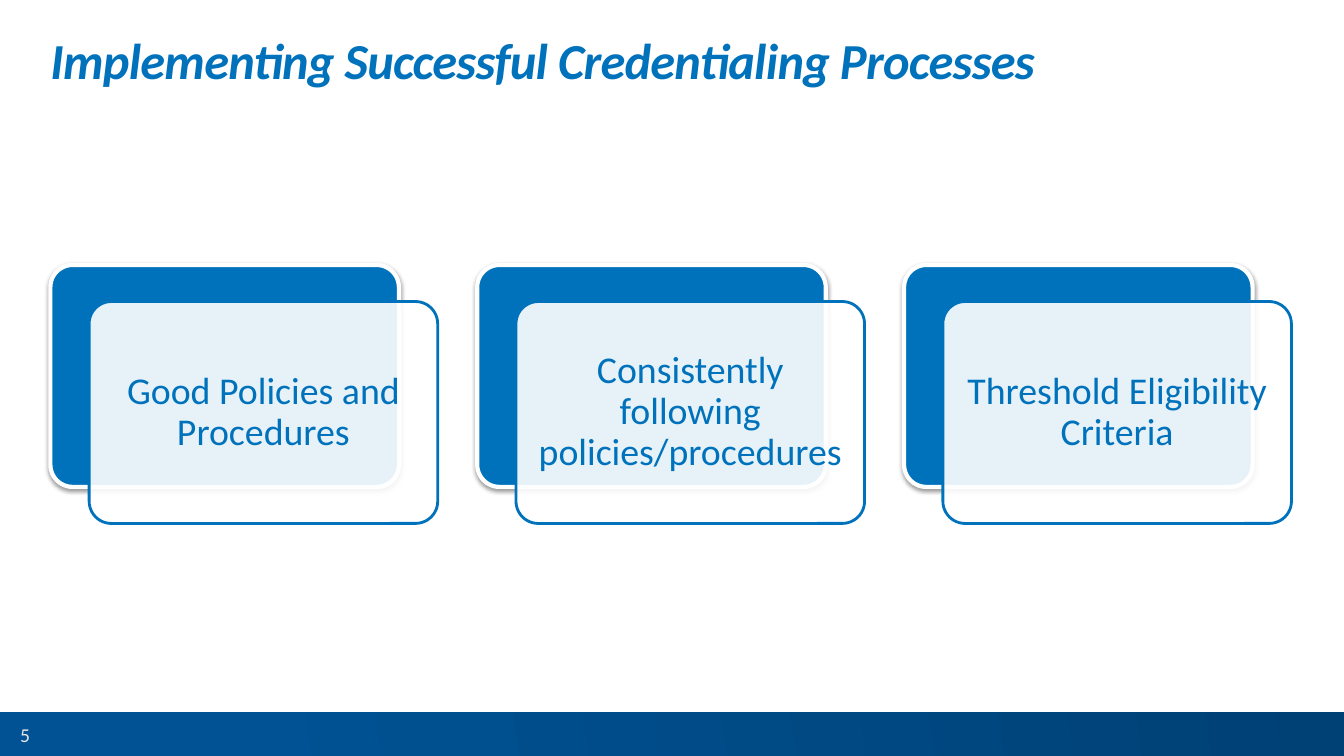
from lxml.etree import SubElement
from pptx import Presentation
from pptx.dml.color import RGBColor
from pptx.enum.shapes import MSO_SHAPE as Preset
from pptx.enum.text import MSO_ANCHOR as Anchor, PP_ALIGN as Align
from pptx.oxml.ns import qn
from pptx.util import Pt

COLORS = {
    "blue": "0072BC",
    "white": "FFFFFF",
    "shadow": "000000",
    "bar_start": "005294",
    "bar_end": "004175",
    "number": "E6E7E8",
}
FONT = "Calibri"

SLIDE_W, SLIDE_H = 960, 540
MARGIN = 36
BAR_TOP, BAR_H = 508.8, 31.5

# Cards: a blue back panel and a translucent front panel, shifted down right
CARD_W, CARD_H = 249, 158.5
CARD_TOP, CARD_PITCH = 189.3, 304.9
SHIFT_X, SHIFT_Y = 27.7, 26.1
TOPICS = [
    "Good Policies and Procedures",
    "Consistently following policies/procedures",
    "Threshold Eligibility Criteria",
]


def color(name):
    return RGBColor.from_string(COLORS[name])


def write(frame, text, size, ink, inset=(0, 0), anchor=Anchor.MIDDLE,
          align=Align.CENTER, spacing=1.0):
    frame.word_wrap = True
    frame.vertical_anchor = anchor
    frame.margin_left = frame.margin_right = Pt(inset[0])
    frame.margin_top = frame.margin_bottom = Pt(inset[1])
    line = frame.paragraphs[0]
    line.alignment = align
    line.line_spacing = spacing
    run = line.add_run()
    run.text = text
    run.font.name = FONT
    run.font.size = Pt(size)
    run.font.color.rgb = color(ink)
    return run


def add_text(slide, left, top, width, height, text, size, ink, **style):
    box = slide.shapes.add_textbox(Pt(left), Pt(top), Pt(width), Pt(height))
    return write(box.text_frame, text, size, ink, **style)


def add_panel(slide, left, top, fill, outline, weight):
    panel = slide.shapes.add_shape(
        Preset.ROUNDED_RECTANGLE, Pt(left), Pt(top), Pt(CARD_W), Pt(CARD_H))
    panel.adjustments[0] = 0.1
    panel.shadow.inherit = False
    panel.fill.solid()
    panel.fill.fore_color.rgb = color(fill)
    panel.line.color.rgb = color(outline)
    panel.line.width = Pt(weight)
    return panel


def add_shadow(panel):
    effects = panel._element.spPr.find(qn("a:effectLst"))
    shadow = SubElement(
        effects, qn("a:outerShdw"), blurRad=str(Pt(3.1)), dist=str(Pt(1.6)),
        dir="5400000", rotWithShape="0")
    tint = SubElement(shadow, qn("a:srgbClr"), val=COLORS["shadow"])
    SubElement(tint, qn("a:alpha"), val="38000")


def add_card(slide, left, topic):
    back = add_panel(slide, left, CARD_TOP, "blue", "white", 3)
    add_shadow(back)
    front = add_panel(slide, left + SHIFT_X, CARD_TOP + SHIFT_Y,
                      "white", "blue", 2)
    tint = front._element.spPr.find(qn("a:solidFill"))[0]
    SubElement(tint, qn("a:alpha"), val="90000")
    write(front.text_frame, topic, 27, "blue", inset=(8, 8), spacing=0.9)


def add_footer_bar(slide):
    bar = slide.shapes.add_shape(
        Preset.RECTANGLE, 0, Pt(BAR_TOP), Pt(SLIDE_W), Pt(BAR_H))
    bar.shadow.inherit = False
    bar.line.fill.background()
    bar.fill.gradient()
    bar.fill.gradient_angle = 8
    start, end = bar.fill.gradient_stops
    start.position, end.position = 0.18, 1
    start.color.rgb = color("bar_start")
    end.color.rgb = color("bar_end")


def main():
    deck = Presentation()
    deck.slide_width, deck.slide_height = Pt(SLIDE_W), Pt(SLIDE_H)
    slide = deck.slides.add_slide(deck.slide_layouts[6])

    # Footer bar
    add_footer_bar(slide)

    # Three topic cards
    for index, topic in enumerate(TOPICS):
        add_card(slide, MARGIN + index * CARD_PITCH, topic)

    # Title
    title = add_text(
        slide, MARGIN, 27.4, SLIDE_W - 2 * MARGIN, 39,
        "Implementing Successful Credentialing Processes", 36, "blue",
        anchor=Anchor.TOP, align=Align.LEFT, spacing=0.85)
    title.font.bold = title.font.italic = True
    title.font._element.set("spc", "-50")

    # Slide number
    add_text(slide, 0, BAR_TOP, MARGIN, BAR_H, "5", 14, "number",
             inset=(7.2, 3.6))

    deck.save("out.pptx")


if __name__ == "__main__":
    main()
